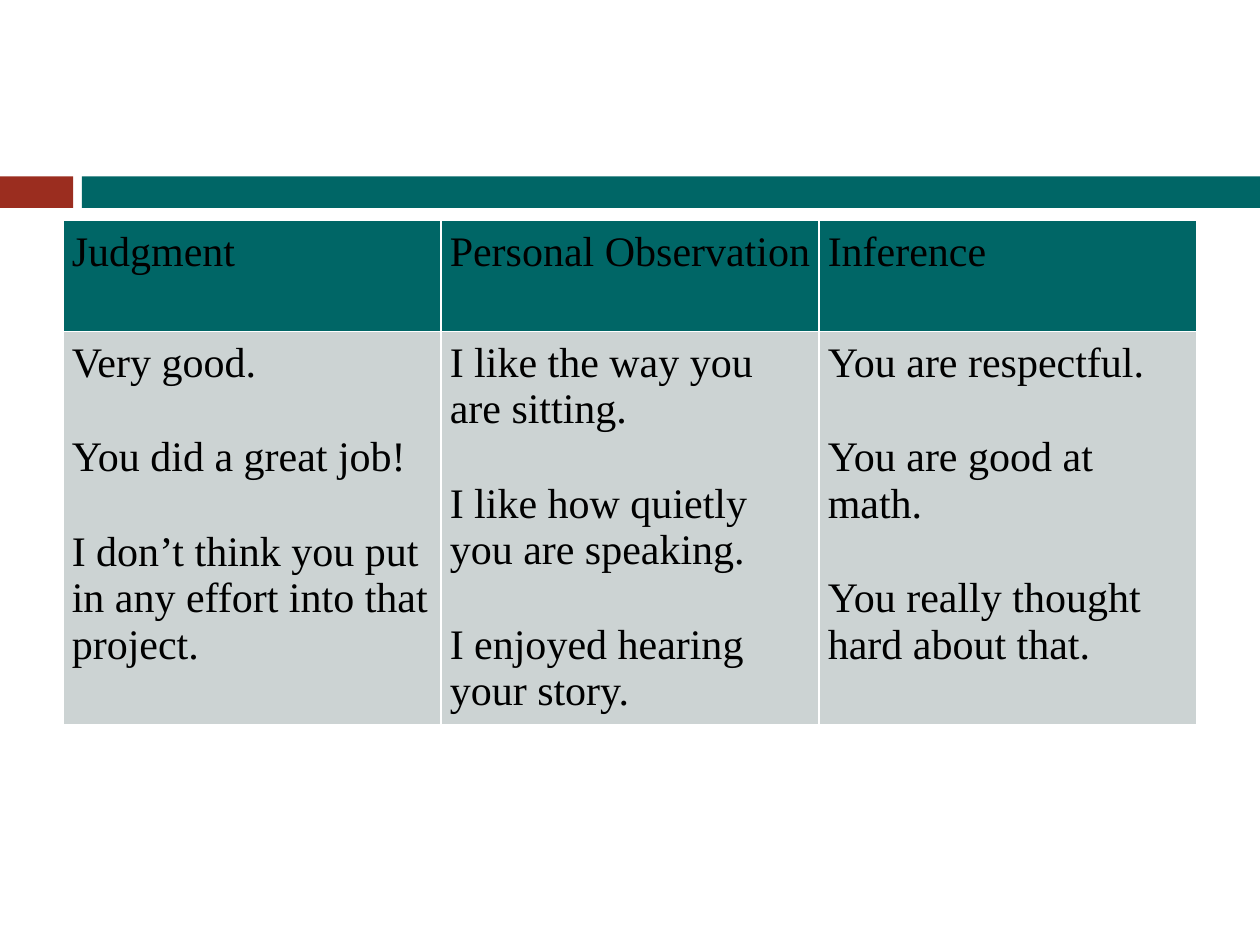
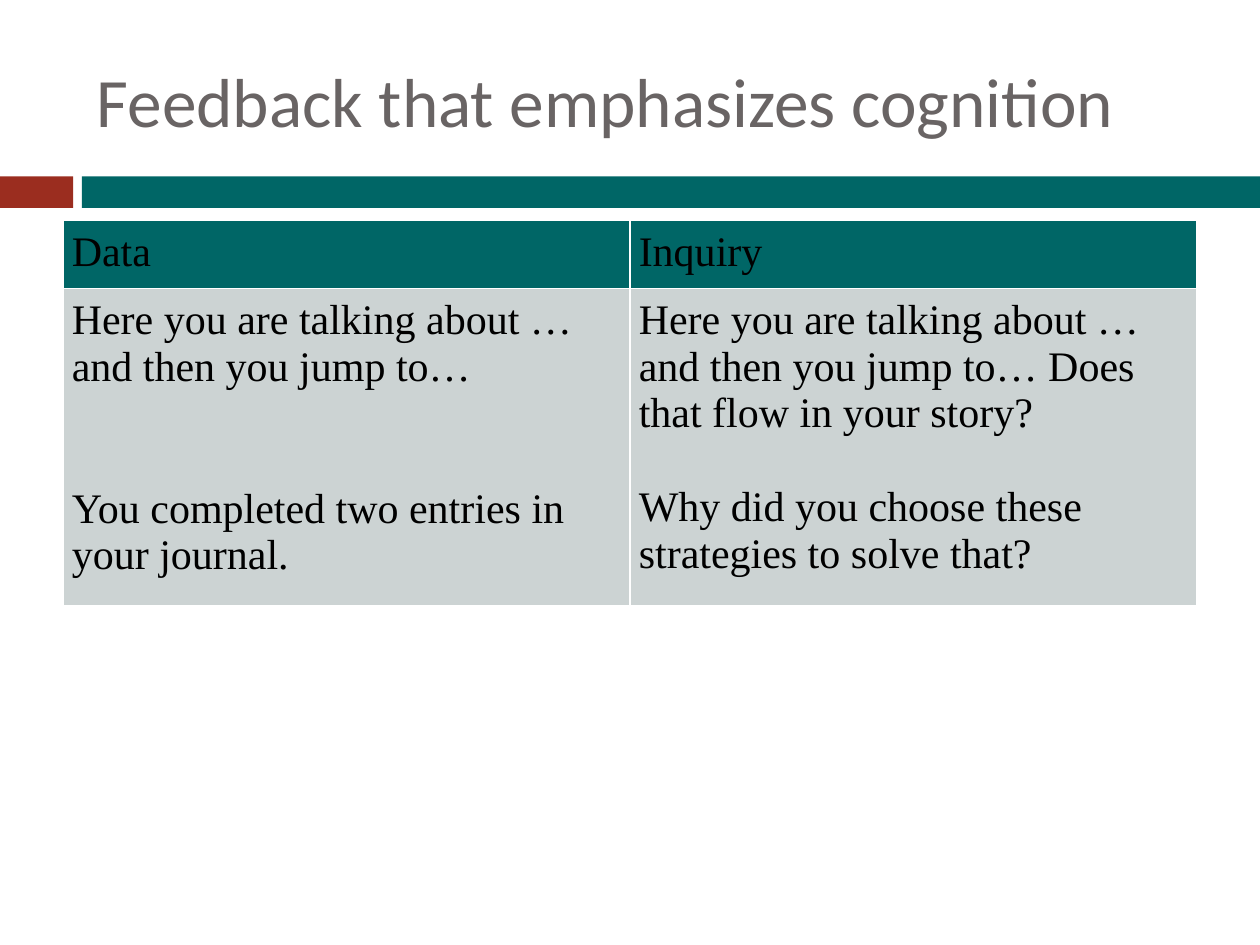
from dataclasses import dataclass

from lxml.etree import SubElement
from pptx import Presentation
from pptx.dml.color import RGBColor
from pptx.enum.shapes import MSO_SHAPE as Preset
from pptx.enum.text import MSO_ANCHOR as Anchor
from pptx.oxml.ns import qn
from pptx.slide import Slide
from pptx.table import _Cell as Cell
from pptx.util import Inches, Pt

TEAL = RGBColor(0x00, 0x66, 0x66)
BRICK = RGBColor(0x9B, 0x2D, 0x1F)
PALE_GRAY = RGBColor(0xCC, 0xD3, 0xD3)
TITLE_GRAY = RGBColor(0x69, 0x64, 0x64)
BLACK = RGBColor(0x00, 0x00, 0x00)
WHITE = RGBColor(0xFF, 0xFF, 0xFF)

TITLE_FONT = "Calibri"
TABLE_FONT = "Times New Roman"
TABLE_WIDTH = 9
CELL_INSET = Inches(0.07)
GAP = 27.4


@dataclass(frozen=True)
class Band:
    left: float
    width: float
    color: RGBColor


@dataclass(frozen=True)
class Column:
    heading: str
    examples: tuple[str, ...]
    gap: float = GAP


@dataclass(frozen=True)
class FeedbackSlide:
    title: str
    columns: tuple[Column, ...]
    heading_height: float
    examples_height: float


BANDS = (Band(0, 0.58, BRICK), Band(0.65, 9.35, TEAL))

SLIDES = (
    FeedbackSlide(
        "",
        (
            Column("Judgment", (
                "Very good.",
                "You did a great job!",
                "I don’t think you put in any effort into that project.",
            )),
            Column("Personal Observation", (
                "I like the way you are sitting.",
                "I like how quietly you are speaking.",
                "I enjoyed hearing your story.",
            )),
            Column("Inference", (
                "You are respectful.",
                "You are good at math.",
                "You really thought hard about that.",
            )),
        ),
        0.88,
        3.12,
    ),
    FeedbackSlide(
        "Feedback that emphasizes cognition",
        (
            Column("Data", (
                "Here you are talking about …and then you jump to…",
                "You completed two entries in your journal.",
            ), gap=2 * GAP),
            Column("Inquiry", (
                "Here you are talking about …and then you jump to… Does that flow in your story?",
                "Why did you choose these strategies to solve that?",
            )),
        ),
        0.51,
        2.36,
    ),
)


def draw_band(slide: Slide, band: Band) -> None:
    bar = slide.shapes.add_shape(
        Preset.RECTANGLE, Inches(band.left), Inches(1.4), Inches(band.width), Inches(0.25)
    )
    bar.shadow.inherit = False
    bar.fill.solid()
    bar.fill.fore_color.rgb = band.color
    bar.line.fill.background()


def draw_title(slide: Slide, title: str) -> None:
    box = slide.shapes.add_textbox(Inches(0.67), Inches(0.25), Inches(8.92), Inches(1.08))
    frame = box.text_frame
    frame.word_wrap = True
    frame.vertical_anchor = Anchor.MIDDLE
    frame.text = title
    font = frame.paragraphs[0].runs[0].font
    font.name, font.size = TITLE_FONT, Pt(39.6)
    font.color.rgb = TITLE_GRAY


def add_borders(cell: Cell) -> None:
    properties = cell._tc.get_or_add_tcPr()
    for side in ("a:lnL", "a:lnR", "a:lnT", "a:lnB"):
        line = SubElement(properties, qn(side), w=str(Pt(1)))
        fill = SubElement(line, qn("a:solidFill"))
        SubElement(fill, qn("a:srgbClr"), val=str(WHITE))


def fill_cell(cell: Cell, texts: tuple[str, ...], color: RGBColor, gap: float = 0) -> None:
    """Write one paragraph per text, with gap points between them."""
    add_borders(cell)
    cell.fill.solid()
    cell.fill.fore_color.rgb = color
    cell.margin_left = cell.margin_right = CELL_INSET
    cell.margin_top = cell.margin_bottom = CELL_INSET
    cell.text_frame.text = "\n".join(texts)
    for index, paragraph in enumerate(cell.text_frame.paragraphs):
        if index:
            paragraph.space_before = Pt(gap)
        font = paragraph.runs[0].font
        font.name, font.size, font.bold = TABLE_FONT, Pt(24), False
        font.color.rgb = BLACK


def draw_table(slide: Slide, content: FeedbackSlide) -> None:
    heights = (content.heading_height, content.examples_height)
    table = slide.shapes.add_table(
        len(heights), len(content.columns),
        Inches(0.5), Inches(1.75), Inches(TABLE_WIDTH), Inches(sum(heights)),
    ).table
    for row, height in zip(table.rows, heights):
        row.height = Inches(height)
    for index, column in enumerate(content.columns):
        table.columns[index].width = Inches(TABLE_WIDTH / len(content.columns))
        fill_cell(table.cell(0, index), (column.heading,), TEAL)
        fill_cell(table.cell(1, index), column.examples, PALE_GRAY, column.gap)


def main() -> None:
    deck = Presentation()
    deck.slide_width, deck.slide_height = Inches(10), Inches(7.5)
    for content in SLIDES:
        slide = deck.slides.add_slide(deck.slide_layouts[6])
        for band in BANDS:
            draw_band(slide, band)
        if content.title:
            draw_title(slide, content.title)
        draw_table(slide, content)
    deck.save("out.pptx")


if __name__ == "__main__":
    main()
